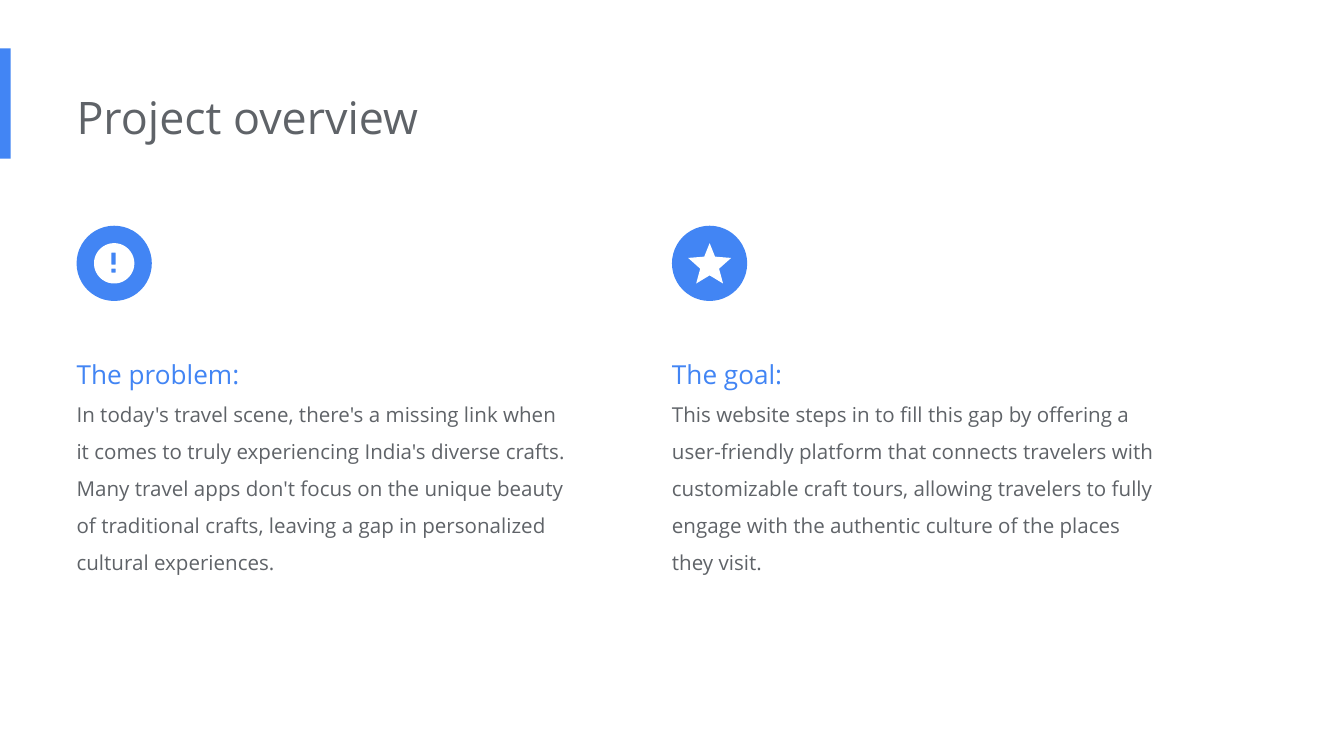
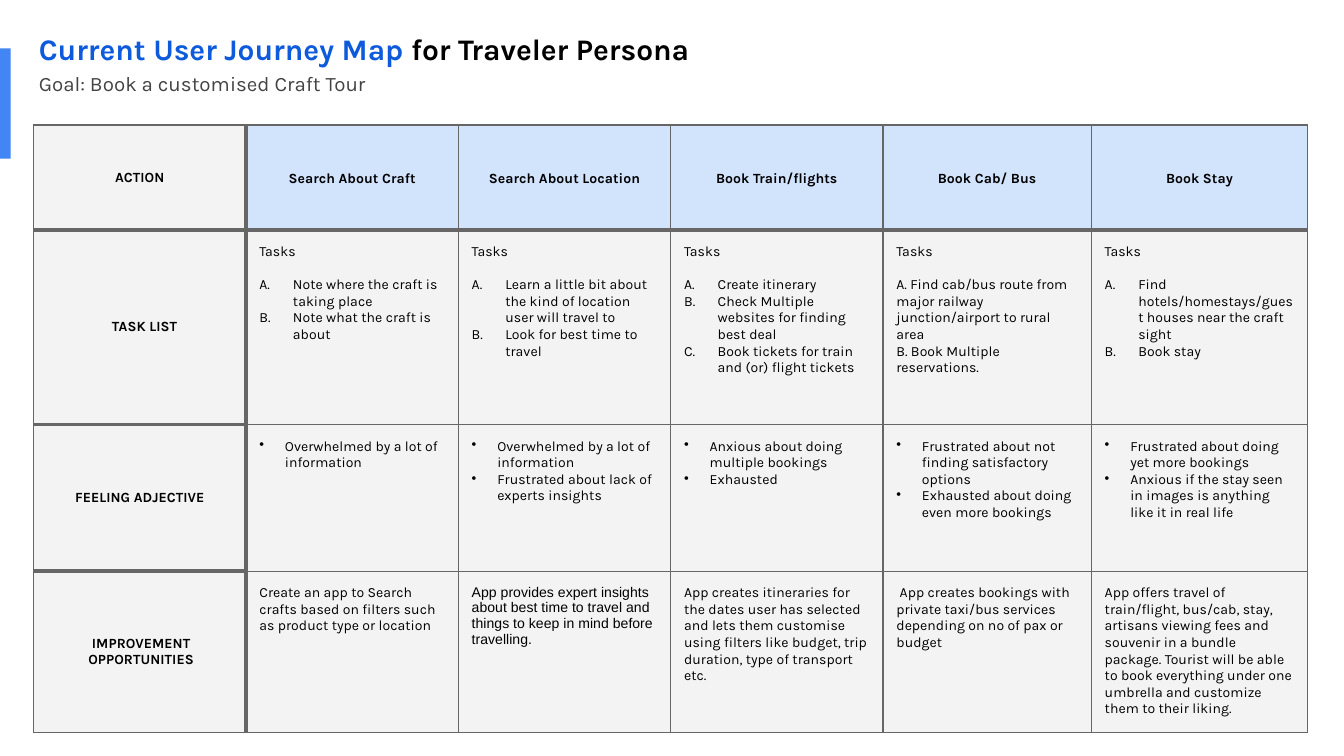
from dataclasses import dataclass
from math import cos, pi, sin

from lxml.etree import SubElement
from pptx import Presentation
from pptx.dml.color import RGBColor
from pptx.enum.shapes import MSO_SHAPE
from pptx.enum.text import MSO_ANCHOR, MSO_AUTO_SIZE, PP_ALIGN
from pptx.oxml import parse_xml
from pptx.oxml.ns import nsdecls, qn
from pptx.util import Inches, Pt


@dataclass(frozen=True)
class Theme:
    accent: str = "4285F4"
    title_blue: str = "0D5BDC"
    gray: str = "5F6368"
    subtitle_gray: str = "434343"
    black: str = "000000"
    white: str = "FFFFFF"
    header_fill: str = "D2E3FC"
    cell_fill: str = "F3F3F3"
    border: str = "666666"
    sans: str = "Open Sans"
    grotesque: str = "Karla"
    plain: str = "Arial"
    title_size: float = 24
    map_title_size: float = 16
    heading_size: float = 14
    body_size: float = 11
    cell_size: float = 7.5
    thin: float = 0.75
    thick: float = 2.25


THEME = Theme()

# Content of the overview slide
OVERVIEW = [
    ("The problem:",
     "In today's travel scene, there's a missing link when it comes to truly experiencing "
     "India's diverse crafts. Many travel apps don't focus on the unique beauty of traditional "
     "crafts, leaving a gap in personalized cultural experiences."),
    ("The goal:",
     "This website steps in to fill this gap by offering a user-friendly platform that connects "
     "travelers with customizable craft tours, allowing travelers to fully engage with the "
     "authentic culture of the places they visit."),
]

# Content of the journey map, one row of the table at a time
ACTIONS = ["Search About Craft", "Search About Location", "Book Train/flights",
           "Book Cab/ Bus", "Book Stay"]
TASKS = [
    ["Note where the craft is taking place", "Note what the craft is about"],
    ["Learn a little bit about the kind of location user will travel to",
     "Look for best time to travel"],
    ["Create itinerary", "Check Multiple websites for finding best deal",
     "Book tickets for train and (or) flight tickets"],
    ["A. Find cab/bus route from major railway junction/airport to rural area",
     "B. Book Multiple reservations."],
    ["Find hotels/homestays/guest houses near the craft sight", "Book stay"],
]
FEELINGS = [
    ["Overwhelmed by a lot of information"],
    ["Overwhelmed by a lot of information", "Frustrated about lack of experts insights"],
    ["Anxious about doing multiple bookings", "Exhausted"],
    ["Frustrated about not finding satisfactory options",
     "Exhausted about doing even more bookings"],
    ["Frustrated about doing yet more bookings",
     "Anxious if the stay seen in images is anything like it in real life"],
]
OPPORTUNITIES = [
    "Create an app to Search crafts based on filters such as product type or location",
    "App provides expert insights about best time to travel and things to keep in mind "
    "before travelling.",
    "App creates itineraries for the dates user has selected and lets them customise using "
    "filters like budget, trip duration, type of transport etc.",
    " App creates bookings with private taxi/bus services depending on no of pax or budget",
    "App offers travel of train/flight, bus/cab, stay, artisans viewing fees and souvenir in a "
    "bundle package. Tourist will be able to book everything under one umbrella and customize "
    "them to their liking.",
]
ROW_LABELS = ["ACTION", "TASK LIST", "FEELING ADJECTIVE", "IMPROVEMENT OPPORTUNITIES"]
COLUMN_WIDTHS = [1.58, 1.58, 1.58, 1.58, 1.55, 1.61]
ROW_HEIGHTS = [0.78, 1.45, 1.09, 1.2]
LETTERS = '<a:buAutoNum %s type="alphaUcPeriod"/>'
DOTS = '<a:buChar %s char="•"/>'


# Text
def set_values(target, values):
    for name, value in values.items():
        setattr(target, name, value)


def style(size, color, font, bold=False):
    return {"size": Pt(size), "name": font, "bold": bold, "color": color}


def write(paragraph, runs, layout=None):
    """Fill a paragraph with (text, style) runs."""
    set_values(paragraph, layout or {})
    for text, run_style in runs:
        run = paragraph.add_run()
        run.text = text
        values = dict(run_style)
        run.font.color.rgb = RGBColor.from_string(values.pop("color"))
        set_values(run.font, values)


def next_paragraph(frame):
    first = frame.paragraphs[0]
    return frame.add_paragraph() if first.runs else first


def set_indent(paragraph, left, first):
    properties = paragraph._p.get_or_add_pPr()
    properties.set("marL", str(Inches(left)))
    properties.set("indent", str(Inches(first)))
    return properties


def add_bullet(paragraph, marker, indent):
    properties = set_indent(paragraph, indent, -indent)
    color = SubElement(properties, qn("a:buClr"))
    SubElement(color, qn("a:srgbClr")).set("val", THEME.black)
    properties.append(parse_xml(marker % nsdecls("a")))


def add_text(slide, box, paragraphs, left_inset=0.1, grow=False):
    shape = slide.shapes.add_textbox(*map(Inches, box))
    frame = shape.text_frame
    set_values(frame, {
        "word_wrap": True,
        "auto_size": MSO_AUTO_SIZE.SHAPE_TO_FIT_TEXT if grow else MSO_AUTO_SIZE.NONE,
        "margin_left": Inches(left_inset), "margin_top": Inches(0.1),
        "margin_right": Inches(0.1), "margin_bottom": Inches(0.1)})
    for runs, layout in paragraphs:
        write(next_paragraph(frame), runs, layout)


# Shapes
def paint(shape, color):
    shape.shadow.inherit = False
    shape.fill.solid()
    shape.fill.fore_color.rgb = RGBColor.from_string(color)
    shape.line.fill.background()


def add_solid(slide, kind, box, color):
    paint(slide.shapes.add_shape(kind, *map(Inches, box)), color)


def add_outline(slide, center, contours):
    """Draw closed contours given as offsets from a center."""
    contours = [[(Inches(center[0] + x), Inches(center[1] + y)) for x, y in contour]
                for contour in contours]
    builder = slide.shapes.build_freeform(*contours[0][0])
    for index, contour in enumerate(contours):
        if index:
            builder.move_to(*contour[0])
        builder.add_line_segments(contour[1:], close=True)
    paint(builder.convert_to_shape(), THEME.white)


def alert_contours():
    radius, steps = 0.15, 72
    disc = [(radius * cos(2 * pi * step / steps), radius * sin(2 * pi * step / steps))
            for step in range(steps)]
    marks = [[(0.01, top), (0.01, bottom), (-0.02, bottom), (-0.02, top)]
             for top, bottom in ((-0.08, 0.01), (0.04, 0.07))]
    return [disc] + marks


def star_contours():
    right = [(0, -0.15), (0.04, -0.05), (0.16, -0.04), (0.07, 0.04), (0.1, 0.15), (0, 0.09)]
    return [right + [(-x, y) for x, y in right[-2:0:-1]]]


# Table
def set_borders(cell, widths):
    properties = cell._tc.get_or_add_tcPr()
    for index, (side, width) in enumerate(widths.items()):
        properties.insert(index, parse_xml(
            f'<a:ln{side} {nsdecls("a")} w="{Pt(width)}"><a:solidFill>'
            f'<a:srgbClr val="{THEME.border}"/></a:solidFill></a:ln{side}>'))


def edge_widths(row, column):
    def horizontal(edge):
        return THEME.thick if edge == 1 or (column == 0 and edge in (2, 3)) else THEME.thin

    def vertical(edge):
        return THEME.thick if edge == 1 else THEME.thin

    return {"L": vertical(column), "R": vertical(column + 1),
            "T": horizontal(row), "B": horizontal(row + 1)}


def fill_label(cell, text, layout=None):
    cell.vertical_anchor = MSO_ANCHOR.MIDDLE
    write(cell.text_frame.paragraphs[0],
          [(text, style(THEME.cell_size, THEME.black, THEME.grotesque, True))],
          {"alignment": PP_ALIGN.CENTER, **(layout or {})})


def fill_body(cell, lines, marker=None, indent=0.25, heading=None, font=THEME.grotesque):
    cell_style = style(THEME.cell_size, THEME.black, font)
    frame = cell.text_frame
    if heading:
        write(frame.paragraphs[0], [(heading, cell_style)], {"space_after": Pt(9)})
    for line in lines:
        paragraph = next_paragraph(frame)
        if marker:
            add_bullet(paragraph, marker, indent)
        write(paragraph, [(line, cell_style)])


def add_journey_table(slide):
    table = slide.shapes.add_table(
        len(ROW_HEIGHTS), len(COLUMN_WIDTHS), Inches(0.25), Inches(0.93),
        Inches(sum(COLUMN_WIDTHS)), Inches(sum(ROW_HEIGHTS))).table
    set_values(table, {"first_row": False, "horz_banding": False})
    for column, width in zip(table.columns, COLUMN_WIDTHS):
        column.width = Inches(width)
    for row, height in zip(table.rows, ROW_HEIGHTS):
        row.height = Inches(height)

    for row in range(len(ROW_HEIGHTS)):
        for column in range(len(COLUMN_WIDTHS)):
            cell = table.cell(row, column)
            is_header = row == 0 and column > 0
            cell.fill.solid()
            cell.fill.fore_color.rgb = RGBColor.from_string(
                THEME.header_fill if is_header else THEME.cell_fill)
            set_values(cell, {f"margin_{side}": Inches(0.1)
                              for side in ("left", "top", "right", "bottom")})
            set_borders(cell, edge_widths(row, column))

    for row, label in enumerate(ROW_LABELS):
        fill_label(table.cell(row, 0), label)
    set_indent(table.cell(1, 0).text_frame.paragraphs[0], 0.19, -0.12)
    table.cell(3, 0).margin_left = Inches(0.12)

    for index, action in enumerate(ACTIONS):
        column = index + 1
        fill_label(table.cell(0, column), action, {"line_spacing": 1.15})
        typed_letters = TASKS[index][0].startswith("A. ")
        fill_body(table.cell(1, column), TASKS[index],
                  None if typed_letters else LETTERS, heading="Tasks")
        fill_body(table.cell(2, column), FEELINGS[index], DOTS, 0.19)
        fill_body(table.cell(3, column), [OPPORTUNITIES[index]],
                  font=THEME.plain if column == 2 else THEME.grotesque)


# Slides
def add_slide(presentation):
    slide = presentation.slides.add_slide(presentation.slide_layouts[6])
    add_solid(slide, MSO_SHAPE.RECTANGLE, (0, 0.36, 0.08, 0.82), THEME.accent)
    return slide


def build_overview(presentation):
    slide = add_slide(presentation)
    add_text(slide, (0.57, 0.57, 6.73, 0.61),
             [([("Project overview", style(THEME.title_size, THEME.gray, THEME.sans))], {})],
             left_inset=0, grow=True)
    spacing = {"line_spacing": 1.5}
    icons = [alert_contours(), star_contours()]
    for left, (heading, body), contours in zip((0.57, 5), OVERVIEW, icons):
        add_text(slide, (left, 2.45, 3.77, 1.94), [
            ([(heading, style(THEME.heading_size, THEME.accent, THEME.sans))], spacing),
            ([(body, style(THEME.body_size, THEME.gray, THEME.sans))], spacing),
        ], left_inset=0, grow=True)
        add_solid(slide, MSO_SHAPE.OVAL, (left, 1.68, 0.56, 0.56), THEME.accent)
        add_outline(slide, (left + 0.28, 1.96), contours)


def build_journey_map(presentation):
    slide = add_slide(presentation)
    size, font = THEME.map_title_size, THEME.grotesque
    add_text(slide, (0.19, 0.13, 5.59, 0.44), [([
        ("Current User Journey Map ", style(size, THEME.title_blue, font, True)),
        ("for Traveler Persona", style(size, THEME.black, font, True))], {})])
    add_text(slide, (0.19, 0.43, 9.28, 0.3), [(
        [("Goal: Book a customised Craft Tour",
          style(THEME.body_size, THEME.subtitle_gray, font))], {"space_after": Pt(3)})])
    add_journey_table(slide)


def main():
    presentation = Presentation()
    # Widescreen, 16 to 9
    set_values(presentation, {"slide_width": Inches(10), "slide_height": Inches(10 * 9 / 16)})
    build_overview(presentation)
    build_journey_map(presentation)
    presentation.save("out.pptx")


if __name__ == "__main__":
    main()
